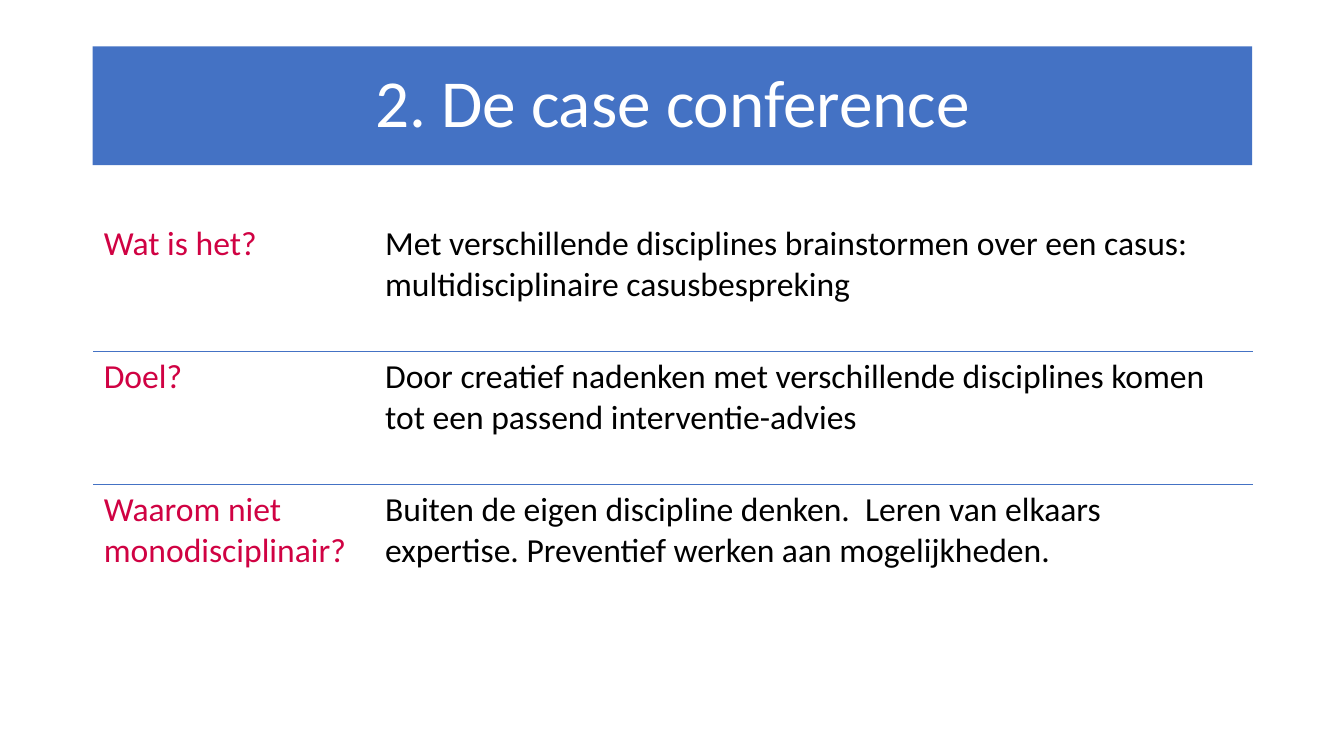
from dataclasses import dataclass

from lxml.etree import SubElement as Sub
from pptx import Presentation as Deck
from pptx.dml.color import RGBColor as Rgb
from pptx.enum.shapes import MSO_SHAPE as Kind
from pptx.enum.text import MSO_ANCHOR as Anchor, PP_ALIGN as Align
from pptx.oxml.ns import qn
from pptx.slide import Slide
from pptx.table import _Cell as Cell
from pptx.text.text import _Paragraph as Para
from pptx.util import Inches, Pt


@dataclass(frozen=True)
class Theme:
    """Colours and type sizes."""
    font: str = "Calibri"
    blue: str = "4472C4"
    red: str = "D00243"
    black: str = "000000"
    white: str = "FFFFFF"
    head: int = 48
    body: int = 24
    rule: int = 1


@dataclass(frozen=True)
class Row:
    """A question with its answer and row height."""
    ask: str
    reply: str
    height: float


THEME = Theme()
ROWS = [
    Row("Wat is het?", "Met verschillende disciplines brainstormen over een casus: "
        "multidisciplinaire casusbespreking", 1.32),
    Row("Doel?", "Door creatief nadenken met verschillende disciplines komen "
        "tot een passend interventie-advies", 1.32),
    Row("Waarom niet monodisciplinair?", "Buiten de eigen discipline denken.  "
        "Leren van elkaars expertise. Preventief werken aan mogelijkheden.", 2.03),
]
COLS = (2.79, 8.7)


def write(para: Para, text: str, size: int, color: str) -> None:
    """Put one styled run in a paragraph."""
    run = para.add_run()
    run.text = text
    form = {"name": THEME.font, "size": Pt(size), "bold": False}
    for key, value in form.items():
        setattr(run.font, key, value)
    run.font.color.rgb = Rgb.from_string(color)


def edge(cell: Cell, side: str) -> None:
    """Draw a blue rule on one side of a cell."""
    line = Sub(cell._tc.get_or_add_tcPr(), qn(f"a:{side}"), w=str(Pt(THEME.rule)))
    fill = Sub(line, qn("a:solidFill"))
    Sub(fill, qn("a:srgbClr"), val=THEME.blue)


def draw_table(slide: Slide) -> None:
    """Draw the questions and answers."""
    frame = slide.shapes.add_table(
        len(ROWS), len(COLS), Inches(0.93), Inches(2.17),
        Inches(sum(COLS)), Inches(sum(row.height for row in ROWS)))
    table = frame.table
    for key in ("first_row", "horz_banding"):
        setattr(table, key, False)
    for col, width in zip(table.columns, COLS):
        col.width = Inches(width)
    for r, row in enumerate(ROWS):
        table.rows[r].height = Inches(row.height)
        pairs = ((row.ask, THEME.red), (row.reply, THEME.black))
        for c, (text, color) in enumerate(pairs):
            cell = table.cell(r, c)
            write(cell.text_frame.paragraphs[0], text, THEME.body, color)
            if r > 0:
                edge(cell, "lnT")
            if r < len(ROWS) - 1:
                edge(cell, "lnB")
            cell.fill.background()


def draw_title(slide: Slide, text: str) -> None:
    """Draw the title bar."""
    bar = slide.shapes.add_shape(
        Kind.RECTANGLE, Inches(0.92), Inches(0.46), Inches(11.5), Inches(1.18))
    bar.shadow.inherit = False
    bar.fill.solid()
    bar.fill.fore_color.rgb = Rgb.from_string(THEME.blue)
    bar.line.fill.background()
    frame = bar.text_frame
    for key, value in {"word_wrap": True, "vertical_anchor": Anchor.MIDDLE}.items():
        setattr(frame, key, value)
    para = frame.paragraphs[0]
    for key, value in {"alignment": Align.CENTER, "line_spacing": 0.9}.items():
        setattr(para, key, value)
    write(para, text, THEME.head, THEME.white)


def main() -> None:
    """Build and save the slide."""
    deck = Deck()
    deck.slide_width, deck.slide_height = Inches(13.33), Inches(7.5)
    slide = deck.slides.add_slide(deck.slide_layouts[6])
    draw_table(slide)
    draw_title(slide, "2. De case conference")
    deck.save("out.pptx")


if __name__ == "__main__":
    main()
